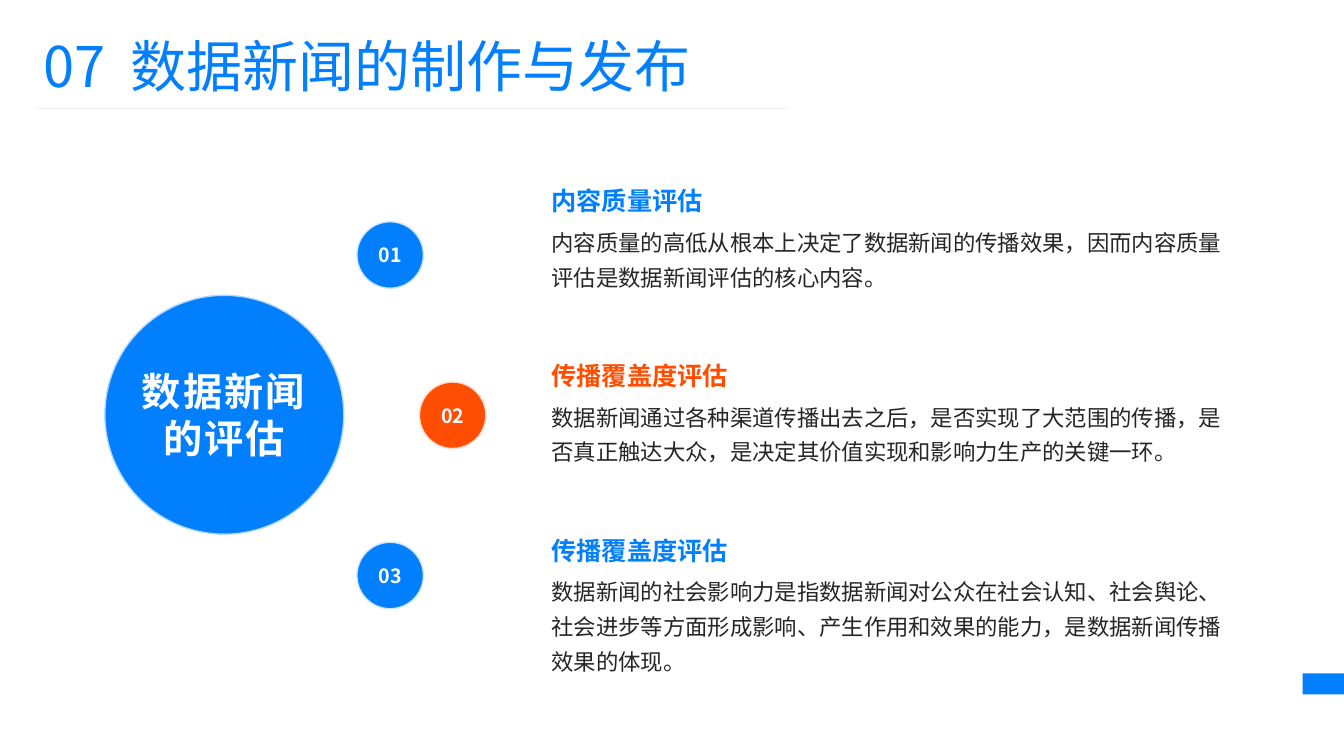
from dataclasses import dataclass

from lxml.etree import SubElement
from pptx import Presentation
from pptx.dml.color import RGBColor
from pptx.enum.shapes import MSO_CONNECTOR, MSO_SHAPE
from pptx.enum.text import MSO_ANCHOR, PP_ALIGN
from pptx.oxml.ns import qn
from pptx.util import Inches, Pt


@dataclass(frozen=True)
class Theme:
    font: str = "Noto Sans CJK SC"
    blue: str = "027FFD"
    orange: str = "FF4E01"
    white: str = "FFFFFF"
    ink: str = "262626"
    rule: str = "F2F2F2"
    hub_rim: str = "B3D9FE"
    blue_rim: str = "CCE5FF"
    orange_rim: str = "FFDCCC"
    title_size: int = 40
    hub_size: int = 28
    heading_size: int = 18
    body_size: int = 16
    number_size: int = 14


theme = Theme()


def write_text(shape, text, *, size, color, bold=False, spacing=0, line_spacing=None,
               align=PP_ALIGN.LEFT, anchor=MSO_ANCHOR.TOP, margins=None, wrap=True):
    """Append a run to the first paragraph; margins are left, top, right, bottom in inches."""
    frame = shape.text_frame
    frame.word_wrap = wrap
    frame.vertical_anchor = anchor
    if margins is not None:
        (frame.margin_left, frame.margin_top,
         frame.margin_right, frame.margin_bottom) = map(Inches, margins)
    paragraph = frame.paragraphs[0]
    paragraph.alignment = align
    paragraph.line_spacing = line_spacing
    run = paragraph.add_run()
    run.text = text
    run.font.size = Pt(size)
    run.font.bold = bold
    run.font.color.rgb = RGBColor.from_string(color)
    run.font.name = theme.font
    properties = run.font._element
    SubElement(properties, qn("a:ea")).set("typeface", theme.font)
    if spacing:
        properties.set("spc", str(int(spacing * 100)))


def add_filled(kind, left, top, width, height, fill, rim=None):
    shape = slide.shapes.add_shape(kind, Inches(left), Inches(top), Inches(width), Inches(height))
    shape.shadow.inherit = False
    shape.fill.solid()
    shape.fill.fore_color.rgb = RGBColor.from_string(fill)
    if rim:
        shape.line.color.rgb = RGBColor.from_string(rim)
        shape.line.width = Pt(1)
    else:
        shape.line.fill.background()
    return shape


presentation = Presentation()
presentation.slide_width = Inches(13.33)
presentation.slide_height = Inches(7.5)
slide = presentation.slides.add_slide(presentation.slide_layouts[5])

# Title, its rule and the page-edge tab
title = slide.shapes.title
title.left, title.top, title.width, title.height = map(Inches, (0.33, 0.26, 7.68, 0.77))
for part, gap in (("07", 0), (" ", 9), ("数据新闻的制作与发布", 0)):
    write_text(title, part, size=theme.title_size, color=theme.blue, spacing=gap)

rule = slide.shapes.add_connector(
    MSO_CONNECTOR.STRAIGHT, Inches(0.35), Inches(1.08), Inches(7.83), Inches(1.08))
rule.line.color.rgb = RGBColor.from_string(theme.rule)
rule.line.width = Pt(0.5)
SubElement(rule._element.spPr, qn("a:effectLst"))

add_filled(MSO_SHAPE.RECTANGLE, 12.92, 6.68, 0.42, 0.21, theme.blue)

# Three criteria: number circle, heading and description
criteria = [
    ("内容质量评估",
     "内容质量的高低从根本上决定了数据新闻的传播效果，因而内容质量评估是数据新闻评估的核心内容。",
     3.54, theme.blue, theme.blue_rim),
    ("传播覆盖度评估",
     "数据新闻通过各种渠道传播出去之后，是否实现了大范围的传播，是否真正触达大众，是决定其价值实现和影响力生产的关键一环。",
     4.16, theme.orange, theme.orange_rim),
    ("传播覆盖度评估",
     "数据新闻的社会影响力是指数据新闻对公众在社会认知、社会舆论、社会进步等方面形成影响、产生作用和效果的能力，是数据新闻传播效果的体现。",
     3.54, theme.blue, theme.blue_rim),
]
text_left, text_width = 5.47, 6.79
heading_height, body_height = 0.64, 1.04
first_heading_top, text_pitch = 1.54, 1.735
first_circle_top, circle_pitch, circle_size = 2.2, 1.59, 0.66

for index, (heading, description, circle_left, color, rim) in enumerate(criteria):
    circle = add_filled(MSO_SHAPE.OVAL, circle_left, first_circle_top + index * circle_pitch,
                        circle_size, circle_size, color, rim)
    write_text(circle, f"{index + 1:02}", size=theme.number_size, color=theme.white, bold=True,
               align=PP_ALIGN.CENTER, anchor=MSO_ANCHOR.MIDDLE, wrap=False)

    heading_top = first_heading_top + index * text_pitch
    heading_box = slide.shapes.add_textbox(
        Inches(text_left), Inches(heading_top), Inches(text_width), Inches(heading_height))
    write_text(heading_box, heading, size=theme.heading_size, color=color, bold=True,
               anchor=MSO_ANCHOR.BOTTOM, margins=(0, 0, 0, 0.04))

    body_box = slide.shapes.add_textbox(
        Inches(text_left), Inches(heading_top + 0.65), Inches(text_width), Inches(body_height))
    write_text(body_box, description, size=theme.body_size, color=theme.ink,
               line_spacing=1.3, margins=(0, 0, 0, 0))

# Central topic
hub = add_filled(MSO_SHAPE.OVAL, 1.04, 2.93, 2.37, 2.37, theme.blue, theme.hub_rim)
write_text(hub, "数据新闻的评估", size=theme.hub_size, color=theme.white, bold=True, spacing=1.5,
           align=PP_ALIGN.CENTER, anchor=MSO_ANCHOR.MIDDLE, margins=(0, 0, 0, 0))

presentation.save("out.pptx")
